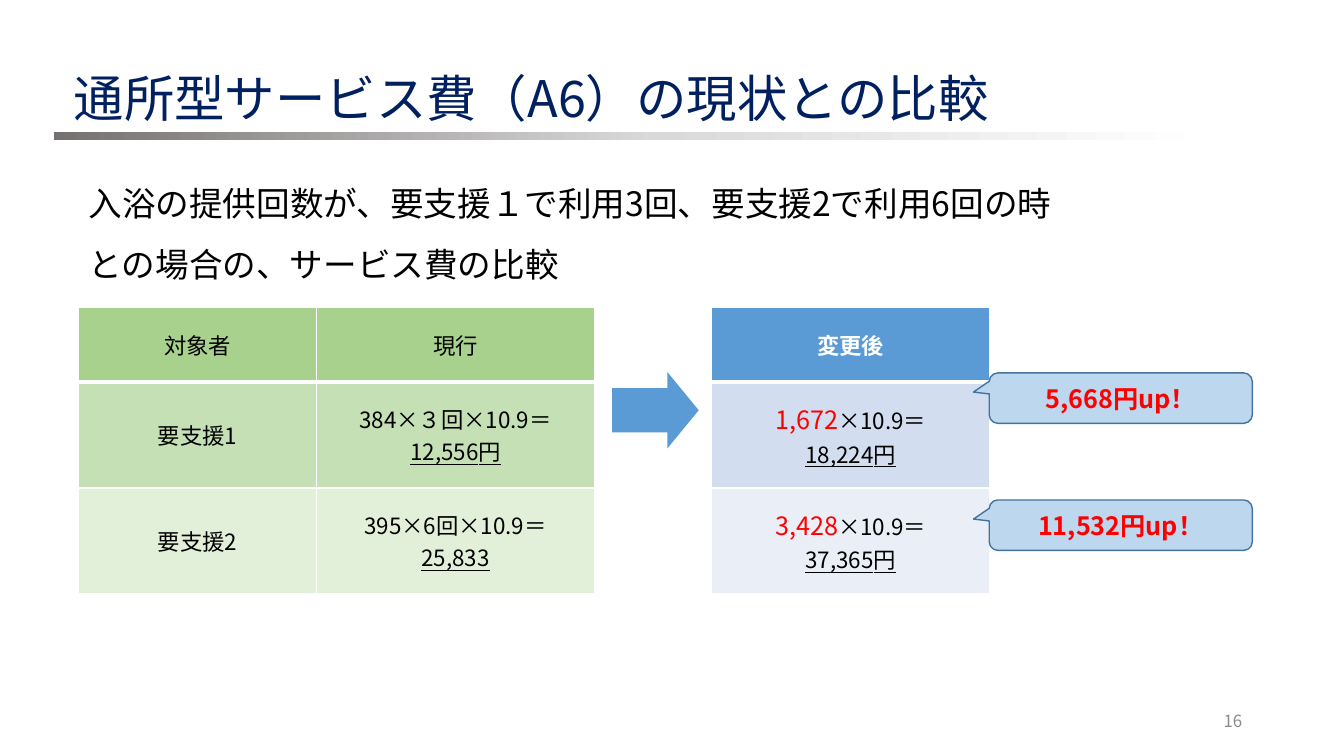
"""Build the slide comparing day-service fees before and after the change."""
from copy import deepcopy
from dataclasses import dataclass

from lxml import etree
from pptx import Presentation
from pptx import util as u
from pptx.dml.color import RGBColor
from pptx.enum import shapes, text
from pptx.oxml import ns

WIDTH, HEIGHT = u.Inches(13.33), u.Inches(7.5)
LEFT, CENTER, RIGHT = text.PP_ALIGN.LEFT, text.PP_ALIGN.CENTER, text.PP_ALIGN.RIGHT
MIDDLE, TOP = text.MSO_ANCHOR.MIDDLE, text.MSO_ANCHOR.TOP


@dataclass(frozen=True)
class Theme:
    font: str = "Noto Sans CJK JP"
    navy: str = "002060"
    black: str = "000000"
    white: str = "FFFFFF"
    red: str = "FF0000"
    gray: str = "8C8C8C"
    blue: str = "5B9BD5"
    callout: str = "BDD7EE"
    outline: str = "43739E"
    greens: tuple[str, ...] = ("A9D18E", "C5E0B4", "E2F0D9")
    blues: tuple[str, ...] = ("5B9BD5", "D2DEEF", "EAEFF7")
    rule: tuple[tuple[float, str], ...] = ((0, "767171"), (0.52, "D9D9D9"), (1, "FFFFFF"))
    title: int = 36
    body: int = 24
    strong: int = 18
    cell: int = 16
    small: int = 12


THEME = Theme()


@dataclass(frozen=True)
class Span:
    """A run of text and its look."""
    words: str
    size: int = THEME.cell
    color: str = THEME.black
    bold: bool = False
    underline: bool = False


@dataclass(frozen=True)
class Area:
    """A rectangle in percent of the slide's width and height."""
    left: float
    top: float
    width: float
    height: float

    def lengths(self) -> tuple[int, int, int, int]:
        """Return left, top, width and height as slide lengths."""
        return across(self.left), down(self.top), across(self.width), down(self.height)


@dataclass(frozen=True)
class Callout:
    """A raise in yen and the top of its balloon."""
    words: str
    top: float


Lines = list[list[Span]]


def across(percent: float) -> int:
    """Turn a percentage of the slide's width into a length."""
    return round(WIDTH * percent / 100)


def down(percent: float) -> int:
    """Turn a percentage of the slide's height into a length."""
    return round(HEIGHT * percent / 100)


def write(frame, lines: Lines, align=LEFT, anchor=MIDDLE, spacing: float = 1.0) -> None:
    """Write paragraphs into a text frame, run by run."""
    frame.word_wrap = True
    frame.auto_size = text.MSO_AUTO_SIZE.NONE
    frame.vertical_anchor = anchor
    write_lines(frame, lines, align, spacing)


def write_lines(frame, lines: Lines, align, spacing: float = 1.0) -> None:
    """Fill the paragraphs of a frame that is already set up."""
    for index, line in enumerate(lines):
        para = frame.add_paragraph() if index else frame.paragraphs[0]
        para.alignment, para.line_spacing = align, spacing
        for span in line:
            run = para.add_run()
            run.text = span.words
            font = run.font
            font.name, font.size = THEME.font, u.Pt(span.size)
            font.bold, font.underline = span.bold, span.underline
            font.color.rgb = RGBColor.from_string(span.color)
            latin = font._element.find(ns.qn("a:latin"))
            east = etree.Element(ns.qn("a:ea"), typeface=THEME.font)
            latin.addnext(east)


def add_text(page, area: Area, span: Span, **layout) -> None:
    """Add a text box holding one span."""
    write(page.shapes.add_textbox(*area.lengths()).text_frame, [[span]], **layout)


def add_shape(page, kind, area: Area, fill: str | None, adjust: tuple[float, ...] = ()):
    """Add a flat preset shape without outline."""
    shape = page.shapes.add_shape(kind, *area.lengths())
    shape.shadow.inherit = False
    shape.line.fill.background()
    for index, value in enumerate(adjust):
        shape.adjustments[index] = value
    if fill:
        shape.fill.solid()
        shape.fill.fore_color.rgb = RGBColor.from_string(fill)
    return shape


def add_rule(page, area: Area) -> None:
    """Add the fading bar under the title."""
    bar = add_shape(page, shapes.MSO_SHAPE.FLOWCHART_PROCESS, area, None)
    bar.fill.gradient()
    bar.fill.gradient_angle = 0
    first = next(bar._element.iter(ns.qn("a:gs")))
    first.addnext(deepcopy(first))
    for stop, (position, color) in zip(bar.fill.gradient_stops, THEME.rule):
        stop.position = position
        stop.color.rgb = RGBColor.from_string(color)


def add_callout(page, callout: Callout) -> None:
    """Add a balloon that names the raise."""
    area = Area(73.6, callout.top, 19.58, 6.67)
    balloon = add_shape(page, shapes.MSO_SHAPE.ROUNDED_RECTANGULAR_CALLOUT, area,
                        THEME.callout, (-0.56, -0.12, 0.17))
    balloon.line.color.rgb = RGBColor.from_string(THEME.outline)
    balloon.line.width = u.Pt(1)
    write(balloon.text_frame, [[Span(callout.words, THEME.strong, THEME.red, bold=True)]], CENTER)


def set_borders(cell, row: int) -> None:
    """Give a cell white borders, heavier below the header."""
    properties = cell._tc.get_or_add_tcPr()
    heavy = {0: "lnB", 1: "lnT"}.get(row)
    for side in ("lnL", "lnR", "lnT", "lnB"):
        width = u.Pt(3 if side == heavy else 1)
        line = etree.SubElement(properties, ns.qn(f"a:{side}"), w=str(int(width)))
        solid = etree.SubElement(line, ns.qn("a:solidFill"))
        etree.SubElement(solid, ns.qn("a:srgbClr"), val=THEME.white)


def add_fee_table(page, left: float, top: float, columns: list[float], rows: list[float],
                  cells: list[list[Lines]]) -> None:
    """Add the fee table; cells without text stay clear."""
    area = Area(left, top, sum(columns), sum(rows))
    table = page.shapes.add_table(len(rows), len(columns), *area.lengths()).table
    table.first_row = table.horz_banding = False
    for column, width in zip(table.columns, columns):
        column.width = across(width)
    for row, height in zip(table.rows, rows):
        row.height = down(height)
    for row, line in enumerate(cells):
        for column, lines in enumerate(line):
            cell = table.cell(row, column)
            cell.vertical_anchor = MIDDLE
            set_borders(cell, row)
            if not lines:
                cell.fill.background()
                continue
            cell.fill.solid()
            shades = THEME.greens if column < 2 else THEME.blues
            cell.fill.fore_color.rgb = RGBColor.from_string(shades[row])
            write_lines(cell.text_frame, lines, CENTER)


def new_fee(units: str, total: str) -> Lines:
    """Return the lines of a fee after the change."""
    return [[Span(units, THEME.strong, THEME.red), Span("×10.9＝")], [Span(total, underline=True)]]


def main() -> None:
    """Build and save the deck."""
    deck = Presentation()
    deck.slide_width, deck.slide_height = WIDTH, HEIGHT
    page = deck.slides.add_slide(deck.slide_layouts[5])
    title = page.shapes.title
    title.left, title.top, title.width, title.height = Area(4.73, 7.2, 95.27, 11.33).lengths()
    write(title.text_frame, [[Span("通所型サービス費（A6）の現状との比較", THEME.title, THEME.navy)]])
    add_rule(page, Area(3.98, 17.47, 86.27, 1.07))
    add_text(page, Area(5.85, 20.93, 73.6, 9.33),
             Span("入浴の提供回数が、要支援１で利用3回、要支援2で利用6回の時との場合の、サービス費の比較",
                  THEME.body), anchor=TOP, spacing=1.5)
    add_fee_table(page, 5.85, 40.67, [17.7, 20.7, 8.7, 20.7], [9.87, 14, 14], [
        [[[Span("対象者")]], [[Span("現行")]], [],
         [[Span("変更後", color=THEME.white, bold=True)]]],
        [[[Span("要支援1")]], [[Span("384×３回×10.9＝"), Span("12,556円", underline=True)]], [],
         new_fee("1,672", "18,224円")],
        [[[Span("要支援2")]], [[Span("395×6回×10.9＝")], [Span("25,833", underline=True)]], [],
         new_fee("3,428", "37,365円")],
    ])
    add_shape(page, shapes.MSO_SHAPE.RIGHT_ARROW, Area(45.54, 49.2, 6.45, 10.13),
              THEME.blue, (0.58, 0.41))
    for callout in (Callout("5,668円up！", 49.33), Callout("11,532円up！", 66.13)):
        add_callout(page, callout)
    add_text(page, Area(70.67, 92.67, 22.5, 5.33), Span("16", THEME.small, THEME.gray), align=RIGHT)
    deck.save("out.pptx")


if __name__ == "__main__":
    main()
